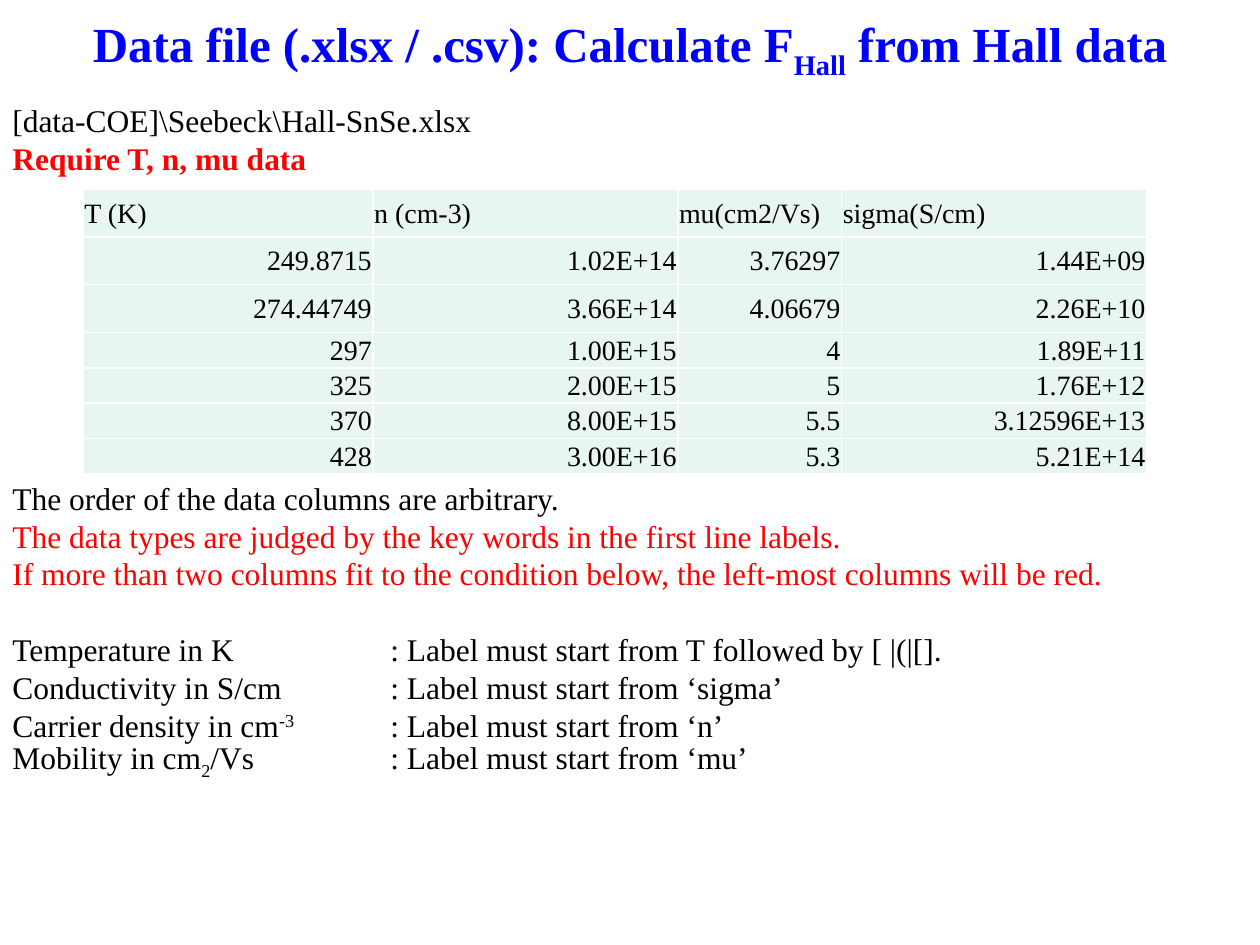
from lxml import etree
from pptx import Presentation
from pptx.dml.color import RGBColor
from pptx.enum.text import MSO_ANCHOR, PP_ALIGN
from pptx.oxml.ns import qn
from pptx.util import Inches, Pt

LEFT, CENTER, RIGHT = PP_ALIGN.LEFT, PP_ALIGN.CENTER, PP_ALIGN.RIGHT
TOP, MIDDLE = MSO_ANCHOR.TOP, MSO_ANCHOR.MIDDLE

WIDTH, HEIGHT = 10, 7.5
BLUE, RED, BLACK, WHITE, MINT = "0000FF", "FF0000", "000000", "FFFFFF", "E7F6EF"
LINE = 21.6  # body line pitch in points


def color(hex_string):
    return RGBColor.from_string(hex_string)


def write(paragraph, text, size=18, ink=BLACK, bold=False, align=LEFT,
          line=None, before=0, tab=None):
    """Fill a paragraph; text is a string or a list of (text, baseline percent)."""
    paragraph.alignment = align
    paragraph.space_before = Pt(before)
    if line:
        paragraph.line_spacing = Pt(line)
    if tab:
        tabs = etree.SubElement(paragraph._p.get_or_add_pPr(), qn("a:tabLst"))
        etree.SubElement(tabs, qn("a:tab"), pos=str(Inches(tab)), algn="l")
    for piece, baseline in [(text, 0)] if isinstance(text, str) else text:
        run = paragraph.add_run()
        run.text = piece
        run.font.name = Style.font
        run.font.size = Pt(size)
        run.font.bold = bold
        run.font.color.rgb = color(ink)
        if baseline:
            run._r.get_or_add_rPr().set("baseline", str(baseline * 1000))


class Style:
    """Holds the font and the current slide; positions are shares of the slide."""

    font = "Times New Roman"

    def __init__(self, slide):
        self.slide = slide

    def place(self, left, top, width, height):
        return (Inches(left * WIDTH), Inches(top * HEIGHT),
                Inches(width * WIDTH), Inches(height * HEIGHT))

    def text(self, box, lines, anchor=TOP):
        frame = self.slide.shapes.add_textbox(*self.place(*box)).text_frame
        frame.word_wrap = True
        frame.vertical_anchor = anchor
        for index, (content, look) in enumerate(lines):
            paragraph = frame.add_paragraph() if index else frame.paragraphs[0]
            write(paragraph, content, **look)

    def border(self, cell):
        properties = cell._tc.get_or_add_tcPr()
        for side in ("lnL", "lnR", "lnT", "lnB"):
            line = etree.SubElement(properties, qn("a:" + side), w=str(Pt(1)))
            fill = etree.SubElement(line, qn("a:solidFill"))
            etree.SubElement(fill, qn("a:srgbClr"), val=WHITE)

    def table(self, box, data, widths, heights):
        table = self.slide.shapes.add_table(
            len(data), len(widths), *self.place(*box)).table
        table.first_row = table.horz_banding = False
        for column, width in zip(table.columns, widths):
            column.width = Inches(width)
        for row, height in zip(table.rows, heights):
            row.height = Inches(height)
        for row_index, values in enumerate(data):
            for column_index, value in enumerate(values):
                cell = table.cell(row_index, column_index)
                cell.margin_left = cell.margin_right = cell.margin_top = Inches(0.01)
                cell.margin_bottom = 0
                cell.vertical_anchor = MIDDLE
                self.border(cell)
                cell.fill.solid()
                cell.fill.fore_color.rgb = color(MINT)
                write(cell.text_frame.paragraphs[0], value, size=16,
                      align=RIGHT if row_index else LEFT)


def main():
    presentation = Presentation()
    presentation.slide_width, presentation.slide_height = Inches(WIDTH), Inches(HEIGHT)
    style = Style(presentation.slides.add_slide(presentation.slide_layouts[6]))

    # Title
    title = [("Data file (.xlsx / .csv): Calculate F", 0), ("Hall", -25),
             (" from Hall data", 0)]
    style.text((0, 0, 1, 0.1),
               [(title, dict(size=28, ink=BLUE, bold=True, align=CENTER))], MIDDLE)

    # Explanations above and below the table, which takes eight lines
    body = dict(line=LINE)
    red = dict(body, ink=RED)
    rule = dict(body, tab=3)
    style.text((0, 0.1, 0.984, 0.78), [
        ("[data-COE]\\Seebeck\\Hall-SnSe.xlsx", body),
        ("Require T, n, mu data", dict(red, bold=True)),
        ("The order of the data columns are arbitrary.", dict(body, before=8 * LINE)),
        ("The data types are judged by the key words in the first line labels.", red),
        ("If more than two columns fit to the condition below, "
         "the left-most columns will be red.", red),
        ("Temperature in K\t: Label must start from T followed by [ |(|[].",
         dict(rule, before=LINE)),
        ("Conductivity in S/cm\t: Label must start from ‘sigma’", rule),
        ([("Carrier density in cm", 0), ("-3", 30),
          ("\t: Label must start from ‘n’", 0)], rule),
        ([("Mobility in cm", 0), ("2", -25),
          ("/Vs\t: Label must start from ‘mu’", 0)], rule),
    ])

    # Sample data
    data = [
        ("T (K)", "n (cm-3)", "mu(cm2/Vs)", "sigma(S/cm)"),
        ("249.8715", "1.02E+14", "3.76297", "1.44E+09"),
        ("274.44749", "3.66E+14", "4.06679", "2.26E+10"),
        ("297", "1.00E+15", "4", "1.89E+11"),
        ("325", "2.00E+15", "5", "1.76E+12"),
        ("370", "8.00E+15", "5.5", "3.12596E+13"),
        ("428", "3.00E+16", "5.3", "5.21E+14"),
    ]
    style.table((0.066, 0.2, 0.844, 0.3), data,
                widths=[2.3, 2.42, 1.3, 2.42], heights=[0.38] * 3 + [0.28] * 4)

    presentation.save("out.pptx")


if __name__ == "__main__":
    main()
